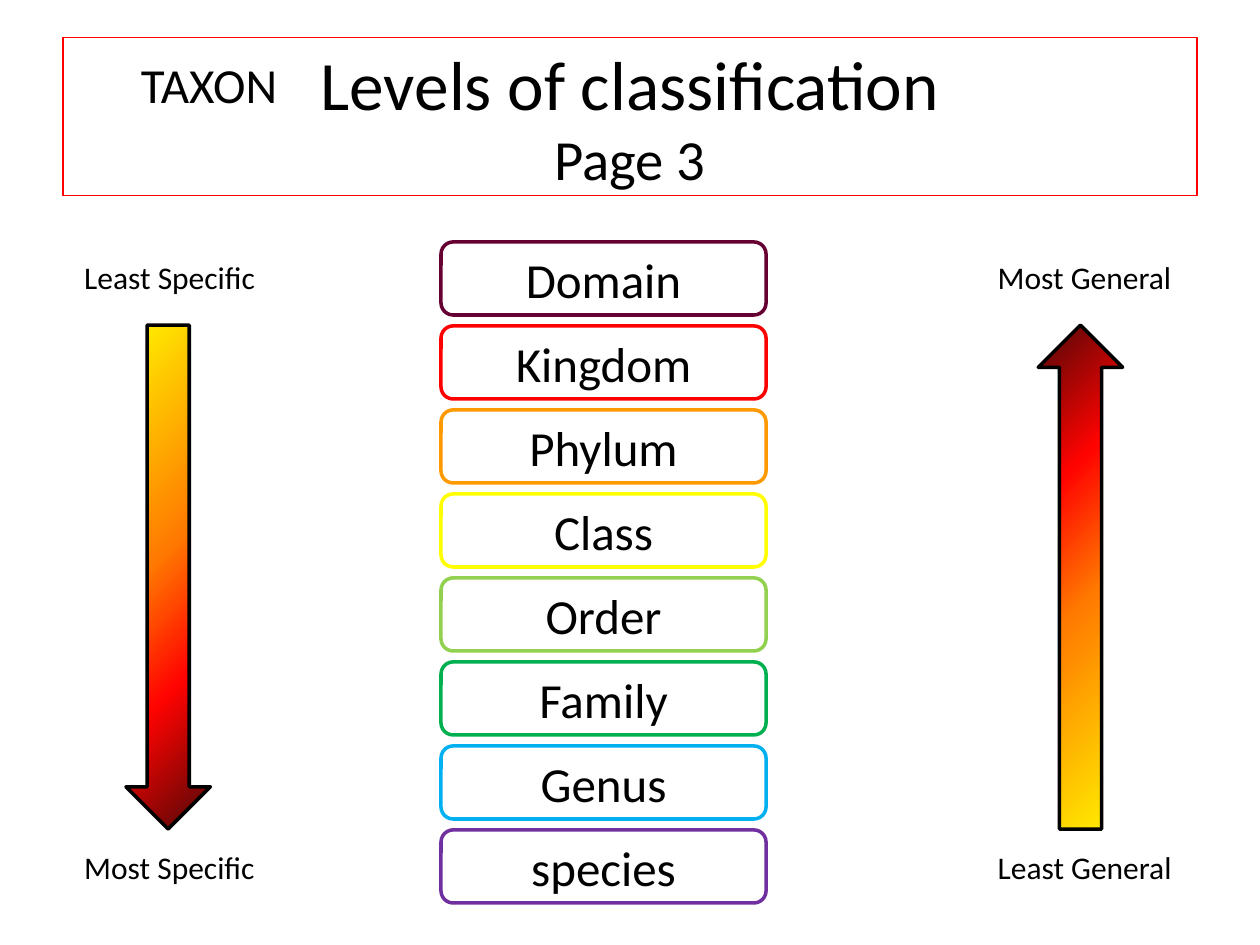
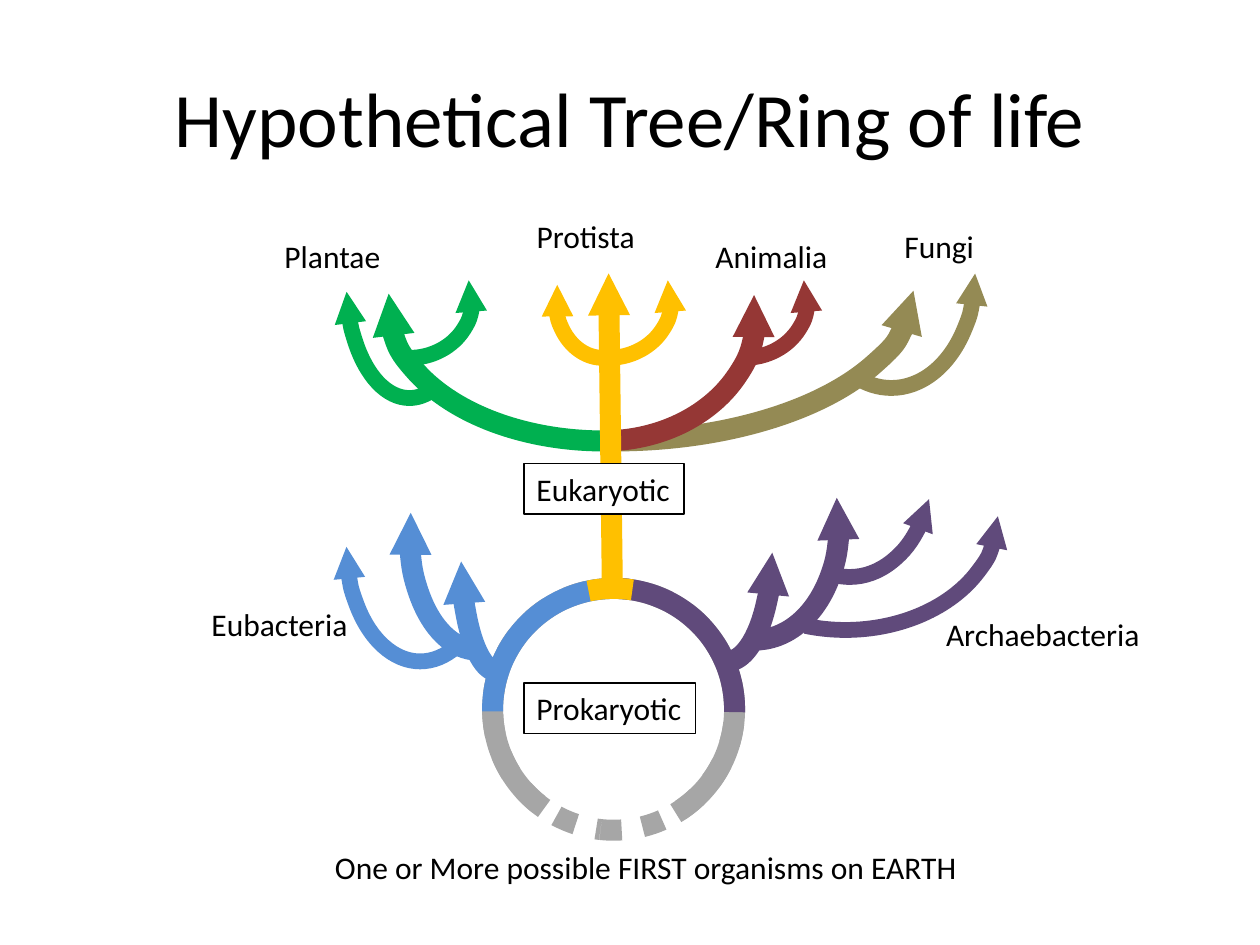
from dataclasses import dataclass
from typing import NamedTuple

import pptx
import pptx.dml.color
import pptx.dml.line
import pptx.enum.dml
import pptx.enum.shapes
import pptx.enum.text
import pptx.oxml
import pptx.oxml.ns
import pptx.oxml.xmlchemy
import pptx.shapes.autoshape
import pptx.slide
import pptx.util
from pptx.util import Inches

SHAPE = pptx.enum.shapes.MSO_SHAPE
ANCHOR = pptx.enum.text.MSO_ANCHOR
ALIGN = pptx.enum.text.PP_ALIGN
qn = pptx.oxml.ns.qn


@dataclass(frozen=True)
class Theme:
    font: str = "Calibri"
    black: str = "000000"
    white: str = "FFFFFF"
    red: str = "FF0000"
    plant: str = "00B050"
    protist: str = "FFC000"
    animal: str = "953735"
    fungus: str = "948A54"
    eubacteria: str = "558ED5"
    archaea: str = "604A7B"
    unknown: str = "A6A6A6"
    fire: tuple[tuple[int, str], ...] = (
        (0, "FFF200"), (45, "FF7A00"), (70, "FF0300"), (100, "4D0808"))
    title: float = 44
    title_small: float = 39.6
    subtitle: float = 32.4
    level: float = 28
    label: float = 18
    hairline: float = 0.75
    outline: float = 2
    branch: float = 12
    twig: float = 9


T = Theme()


class Box(NamedTuple):
    left: float
    top: float
    width: float
    height: float


class Label(NamedTuple):
    text: str
    box: Box
    size: float = T.label
    framed: bool = False


class Level(NamedTuple):
    name: str
    color: str


class Arc(NamedTuple):
    """A clockwise arc; start and end are degrees from the right-hand side."""
    box: Box
    start: float
    end: float
    color: str
    width: float = T.branch
    flip: str = ""
    arrow: bool = True
    dotted: bool = False
    rotation: float = 0


TITLE_BOX = Box(0.5, 0.3, 9, 1.25)
LEVELS = [
    Level("Domain", "660033"), Level("Kingdom", T.red),
    Level("Phylum", "FF9900"), Level("Class", "FFFF00"),
    Level("Order", "92D050"), Level("Family", "00B050"),
    Level("Genus", "00B0F0"), Level("species", "7030A0"),
]
LEVEL_TOP, LEVEL_PITCH = 1.92, 2 / 3
SCALE_LABELS = [
    Label("Most General", Box(7.82, 2, 1.59, 0.4)),
    Label("Least General", Box(7.82, 6.68, 1.6, 0.4)),
    Label("Least Specific", Box(0.57, 2, 1.58, 0.4)),
    Label("Most Specific", Box(0.57, 6.68, 1.57, 0.4)),
    Label("TAXON", Box(1.02, 0.38, 1.3, 0.57), T.level),
]

RING = Box(3.91, 4.67, 1.92, 1.92)
CURVE = (341.75, 91.28)
SHORT = (8.25, 90.64)
WIDE = (0.6, 109.78)


def ring(start: float, end: float, color: str, dotted: bool = False,
         rotation: float = 0) -> Arc:
    return Arc(RING, start, end, color, flip="V", arrow=False,
               dotted=dotted, rotation=rotation)


ARCS_BEHIND_TRUNK = [
    Arc(Box(2.5, 1.08, 4.75, 2.42), 0.43, 91.28, T.fungus),
    Arc(Box(3.08, 1.33, 3.42, 2.17), 357.2, 91.28, T.plant, flip="H"),
    Arc(Box(3.58, 1.5, 2.42, 2), 352.49, 91.28, T.animal),
    Arc(Box(2.75, 1.33, 1, 1.83), 8.18, 102.42, T.plant, T.twig, "H"),
    Arc(Box(6.41, 1.25, 1.33, 1.83), *WIDE, T.fungus, T.twig),
    ring(269.21, 269.04, T.unknown, dotted=True, rotation=5.3),
    ring(300.94, 234.94, T.unknown),
    ring(90.13, 180.94, T.eubacteria),
    ring(358.7, 89.56, T.archaea),
]
ARCS_OVER_TRUNK = [
    ring(81.06, 101.93, T.protist),
    Arc(Box(3.66, 3.5, 0.58, 1.83), *SHORT, T.eubacteria, flip="H"),
    Arc(Box(3.25, 3.33, 1.08, 1.83), *CURVE, T.eubacteria, flip="H"),
    Arc(Box(5.41, 3.42, 0.72, 1.83), *SHORT, T.archaea),
    Arc(Box(5.33, 3.25, 1.33, 1.83), *CURVE, T.archaea),
    Arc(Box(5.41, 1.92, 1, 0.92), *CURVE, T.animal, T.twig),
    Arc(Box(2.75, 1.92, 1, 0.92), *CURVE, T.plant, T.twig),
    Arc(Box(4.41, 1.92, 0.75, 0.92), *CURVE, T.protist, T.twig, "H"),
    Arc(Box(4.33, 1.92, 1, 0.92), *CURVE, T.protist, T.twig),
    Arc(Box(5.5, 3.17, 2.42, 1.83), *WIDE, T.archaea, T.twig),
    Arc(Box(6.08, 2.75, 1.33, 1.83), 25.33, 97.88, T.archaea, T.twig),
    Arc(Box(2.75, 3.42, 1.17, 1.83), *WIDE, T.eubacteria, T.twig, "H"),
]
TREE_LABELS = [
    Label("Prokaryotic", Box(4.16, 5.42, 1.36, 0.4), framed=True),
    Label("Eukaryotic", Box(4.16, 3.68, 1.27, 0.4), framed=True),
    Label("Eubacteria", Box(1.58, 4.75, 1.29, 0.4)),
    Label("Archaebacteria", Box(7.41, 4.83, 1.75, 0.4)),
    Label("Plantae", Box(2.16, 1.83, 0.97, 0.4)),
    Label("Protista", Box(4.16, 1.67, 0.99, 0.4)),
    Label("Animalia", Box(5.58, 1.83, 1.1, 0.4)),
    Label("Fungi", Box(7.08, 1.75, 0.76, 0.4)),
    Label("One or More possible FIRST organisms on EARTH",
          Box(2.56, 6.68, 5.19, 0.4)),
]


def rgb(color: str) -> pptx.dml.color.RGBColor:
    return pptx.dml.color.RGBColor.from_string(color)


def set_line(line: pptx.dml.line.LineFormat, color: str, width: float) -> None:
    line.color.rgb = rgb(color)
    line.width = pptx.util.Pt(width)


def add_arrowhead(spPr: pptx.oxml.xmlchemy.BaseOxmlElement, end: str) -> None:
    head = pptx.oxml.parse_xml(
        f'<a:{end} {pptx.oxml.ns.nsdecls("a")} type="triangle" w="sm" len="sm"/>')
    spPr.find(qn("a:ln")).append(head)


def add_shape(s: pptx.slide.Slide, kind: SHAPE, box: Box, line: str,
              width: float, fill: str | None = None) -> pptx.shapes.autoshape.Shape:
    sp = s.shapes.add_shape(kind, *map(Inches, box))
    sp.shadow.inherit = False
    set_line(sp.line, line, width)
    if fill:
        sp.fill.solid()
        sp.fill.fore_color.rgb = rgb(fill)
    else:
        sp.fill.background()
    return sp


def write(sp: pptx.shapes.autoshape.Shape, lines: list[tuple[str, float]],
          align: ALIGN = ALIGN.CENTER, anchor: ANCHOR = ANCHOR.MIDDLE,
          wrap: bool = True) -> None:
    tf = sp.text_frame
    tf.word_wrap = wrap
    tf.vertical_anchor = anchor
    p = tf.paragraphs[0]
    p.alignment = align
    for i, (text, size) in enumerate(lines):
        if i:
            p.add_line_break()
        r = p.add_run()
        r.text = text
        r.font.name = T.font
        r.font.size = pptx.util.Pt(size)
        r.font.color.rgb = rgb(T.black)


def add_title(s: pptx.slide.Slide, lines: list[tuple[str, float]],
              framed: bool = False) -> None:
    if framed:
        sp = add_shape(s, SHAPE.RECTANGLE, TITLE_BOX, T.red, T.hairline)
    else:
        sp = s.shapes.add_textbox(*map(Inches, TITLE_BOX))
    write(sp, lines)


def add_label(s: pptx.slide.Slide, label: Label) -> None:
    if label.framed:
        sp = add_shape(s, SHAPE.RECTANGLE, label.box, T.black, T.hairline, T.white)
    else:
        sp = s.shapes.add_textbox(*map(Inches, label.box))
    write(sp, [(label.text, label.size)], ALIGN.LEFT, ANCHOR.TOP, wrap=False)
    sp.text_frame.auto_size = pptx.enum.text.MSO_AUTO_SIZE.SHAPE_TO_FIT_TEXT


def add_fire_arrow(s: pptx.slide.Slide, left: float, rotation: float) -> None:
    sp = add_shape(s, SHAPE.DOWN_ARROW, Box(left, 2.58, 0.67, 4),
                   T.black, T.outline)
    sp.rotation = rotation
    sp.fill.gradient()
    sp.fill.gradient_angle = 315
    stops = "".join(f'<a:gs pos="{pos * 1000}"><a:srgbClr val="{color}"/></a:gs>'
                    for pos, color in T.fire)
    old = sp.element.spPr.find(qn("a:gradFill")).find(qn("a:gsLst"))
    old.getparent().replace(old, pptx.oxml.parse_xml(
        f'<a:gsLst {pptx.oxml.ns.nsdecls("a")}>{stops}</a:gsLst>'))


def add_arc(s: pptx.slide.Slide, arc: Arc) -> None:
    sp = add_shape(s, SHAPE.ARC, arc.box, arc.color, arc.width)
    for i, degrees in enumerate((arc.start, arc.end)):
        sp.adjustments[i] = degrees * 0.6  # 60000 units a degree, scaled by 100000
    sp.rotation = arc.rotation
    if arc.flip:
        sp.element.spPr.find(qn("a:xfrm")).set(f"flip{arc.flip}", "1")
    if arc.dotted:
        sp.line.dash_style = pptx.enum.dml.MSO_LINE.ROUND_DOT
    if arc.arrow:
        add_arrowhead(sp.element.spPr, "headEnd")


def add_trunk(s: pptx.slide.Slide) -> None:
    line = s.shapes.add_connector(
        pptx.enum.shapes.MSO_CONNECTOR.STRAIGHT,
        *map(Inches, (4.86, 4.66, 4.83, 2.17)))
    set_line(line.line, T.protist, T.branch)
    spPr = line.element.spPr
    add_arrowhead(spPr, "tailEnd")
    spPr.append(pptx.oxml.parse_xml(
        f'<a:effectLst {pptx.oxml.ns.nsdecls("a")}/>'))


def build_levels(s: pptx.slide.Slide) -> None:
    add_title(s, [("Levels of classification", T.title_small),
                  ("Page 3", T.subtitle)], framed=True)
    for i, level in enumerate(LEVELS):
        box = Box(3.5, LEVEL_TOP + i * LEVEL_PITCH, 2.58, 0.58)
        sp = add_shape(s, SHAPE.ROUNDED_RECTANGLE, box, level.color,
                       T.outline, T.white)
        write(sp, [(level.name, T.level)])
    for left, rotation in ((1, 0), (8.24, 180)):
        add_fire_arrow(s, left, rotation)
    for label in SCALE_LABELS:
        add_label(s, label)


def build_tree(s: pptx.slide.Slide) -> None:
    add_title(s, [("Hypothetical Tree/Ring of life", T.title)])
    for arc in ARCS_BEHIND_TRUNK:
        add_arc(s, arc)
    add_trunk(s)
    for arc in ARCS_OVER_TRUNK:
        add_arc(s, arc)
    for label in TREE_LABELS:
        add_label(s, label)


def main() -> None:
    prs = pptx.Presentation()
    prs.slide_width, prs.slide_height = Inches(10), Inches(7.5)
    for build in (build_levels, build_tree):
        build(prs.slides.add_slide(prs.slide_layouts[6]))
    prs.save("out.pptx")


if __name__ == "__main__":
    main()
